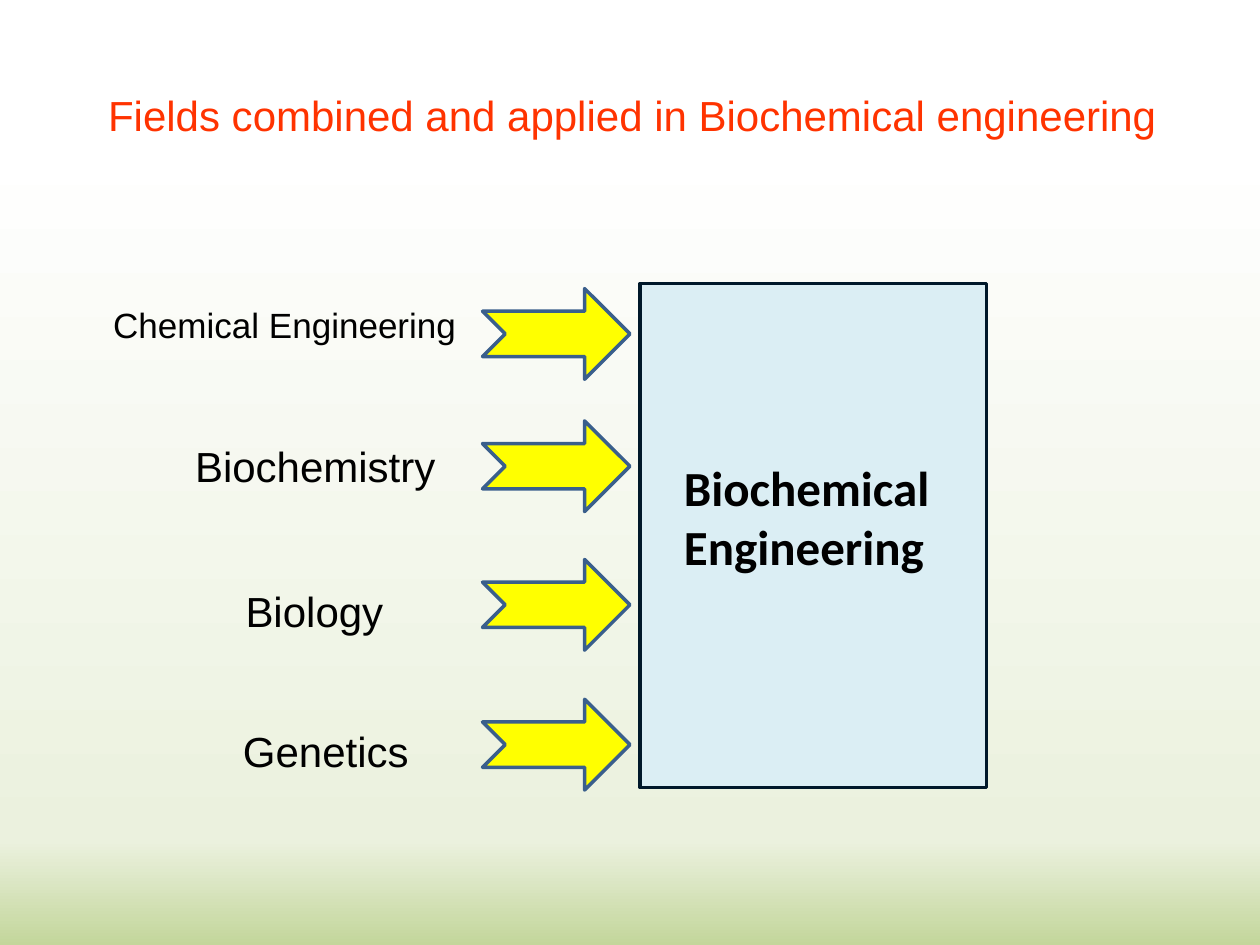
from lxml import etree
from pptx import Presentation
from pptx.dml.color import RGBColor
from pptx.enum.shapes import MSO_SHAPE
from pptx.enum.text import MSO_AUTO_SIZE
from pptx.oxml import parse_xml
from pptx.oxml.ns import nsdecls, qn
from pptx.util import Inches, Pt

# field, font size, label box (left, top, width, height), arrow top
FIELDS = [
    ("Chemical Engineering", 20, (0.8, 2.36, 2.95, 0.44), 2.29),
    ("Biochemistry", 24, (1.45, 3.45, 2.13, 0.5), 3.34),
    ("Biology", 24, (1.85, 4.6, 1.31, 0.5), 4.44),
    ("Genetics", 24, (1.83, 5.71, 1.53, 0.5), 5.55),
]
BACKGROUND_STOPS = [(15, "FFFFFF"), (89, "EBF1DE"), (100, "C3D69B")]


def color(value):
    return RGBColor.from_string(value)


def add_text(slide, box, text, size, font="Arial", ink="000000",
             bold=False, wrap=False, spacing=None):
    frame = slide.shapes.add_textbox(*map(Inches, box)).text_frame
    frame.word_wrap = wrap
    frame.auto_size = MSO_AUTO_SIZE.SHAPE_TO_FIT_TEXT
    paragraph = frame.paragraphs[0]
    paragraph.text = text
    paragraph.line_spacing = spacing
    paragraph.font.name = font
    paragraph.font.size = Pt(size)
    paragraph.font.bold = bold
    paragraph.font.color.rgb = color(ink)


def add_block(slide, kind, box, fill, line):
    block = slide.shapes.add_shape(kind, *map(Inches, box))
    block.shadow.inherit = False
    block.fill.solid()
    block.fill.fore_color.rgb = color(fill)
    block.line.color.rgb = color(line)
    block.line.width = Pt(2)


def paint_background(slide):
    fill = slide.background.fill
    fill.gradient()
    gradient = slide.background._cSld.find(".//" + qn("a:gradFill"))
    for child in list(gradient):
        gradient.remove(child)
    stops = etree.SubElement(gradient, qn("a:gsLst"))
    for percent, value in BACKGROUND_STOPS:
        stops.append(parse_xml(
            f'<a:gs {nsdecls("a")} pos="{percent * 1000}">'
            f'<a:srgbClr val="{value}"/></a:gs>'))
    etree.SubElement(gradient, qn("a:lin"), ang="5400000", scaled="0")


def add_title(slide, box):
    add_text(slide, box, "Fields combined and applied in Biochemical engineering",
             24, ink="FF3300", wrap=True, spacing=1.5)


def add_result(slide, box):
    left, top, width, _ = box
    add_block(slide, MSO_SHAPE.RECTANGLE, box, "DBEEF4", "00182A")
    add_text(slide, (left + 0.25, top + 1.33, width - 0.33, 1.04),
             "Biochemical Engineering", 28, font="Calibri", bold=True, wrap=True)


def add_field(slide, box, name, size, arrow_top):
    add_block(slide, MSO_SHAPE.NOTCHED_RIGHT_ARROW,
              (3.83, arrow_top, 1.17, 0.72), "FFFF00", "3A5F8C")
    add_text(slide, box, name, size)


def main():
    deck = Presentation()
    deck.slide_width, deck.slide_height = Inches(10), Inches(7.5)
    slide = deck.slides.add_slide(deck.slide_layouts[6])
    paint_background(slide)
    add_title(slide, (0.76, 0.46, 8.64, 0.71))
    add_result(slide, (5.08, 2.25, 2.75, 4))
    # Contributing fields, each with an arrow into the result
    for name, size, box, arrow_top in FIELDS:
        add_field(slide, box, name, size, arrow_top)
    deck.save("out.pptx")


if __name__ == "__main__":
    main()
